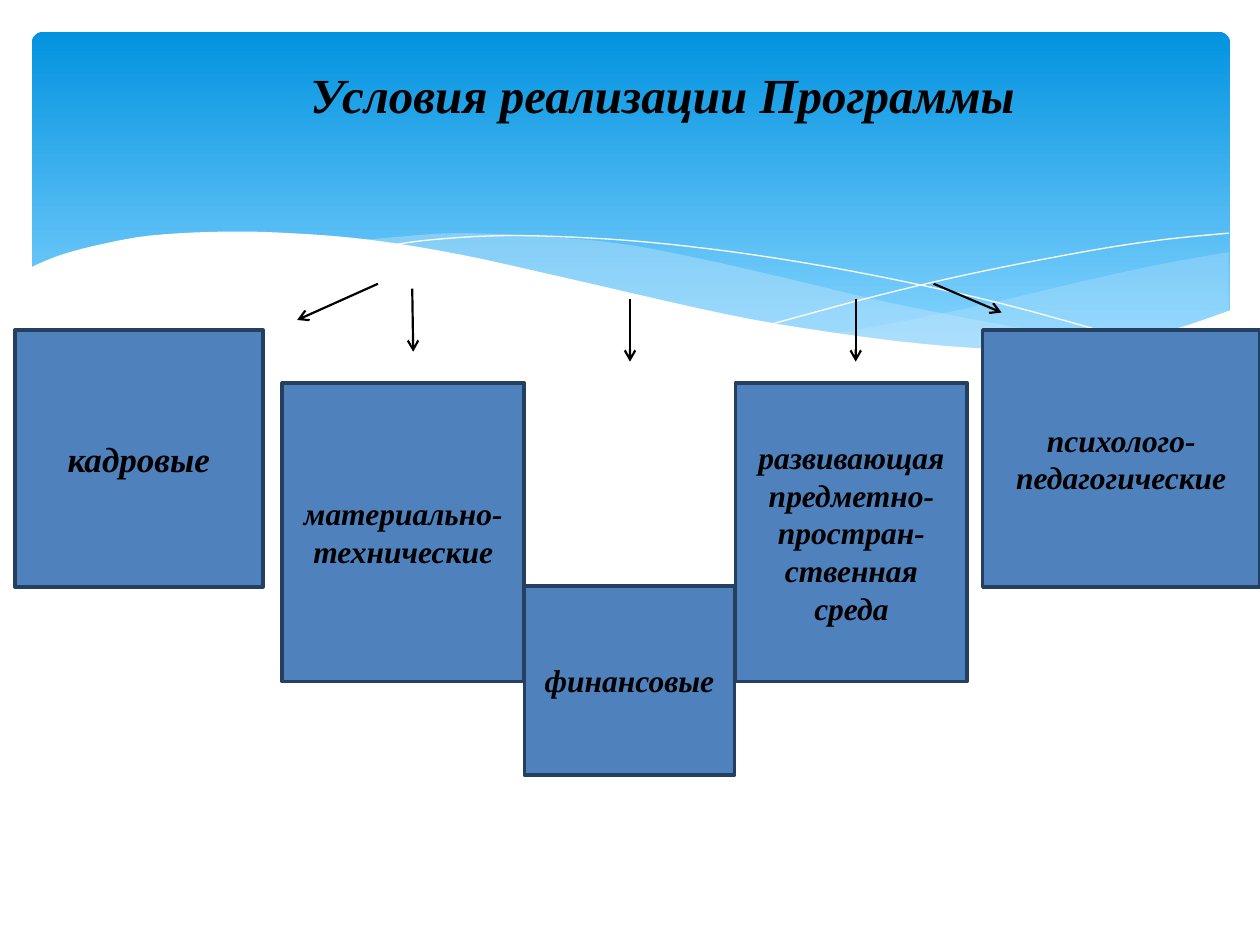
"""Build a slide on the conditions for carrying out the programme."""
from lxml.etree import SubElement
from pptx import Presentation
from pptx.dml.color import RGBColor
from pptx.enum.shapes import MSO_CONNECTOR as Connector, MSO_SHAPE as Shape
from pptx.enum.text import MSO_ANCHOR as Anchor, PP_ALIGN as Align
from pptx.oxml.ns import qn
from pptx.util import Cm, Pt

BLACK = RGBColor(0x00, 0x00, 0x00)
WHITE = RGBColor(0xFF, 0xFF, 0xFF)
SKY_TOP = RGBColor(0x02, 0x93, 0xE0)
SKY_BOTTOM = RGBColor(0x83, 0xD3, 0xFE)
PALE_BLUE = RGBColor(0xC6, 0xE7, 0xFC)
BOX_BLUE = RGBColor(0x4F, 0x81, 0xBD)
BOX_BORDER = RGBColor(0x24, 0x3F, 0x60)

TITLE = "Условия реализации Программы"
TITLE_PLACE = (2.65, 0.48, 21.41, 2.82)
BANNER_PLACE = (0.64, 0.64, 24.16, 6.86)
TEXT_FORMAT = {"name": "Times New Roman", "bold": True, "italic": True}

BOXES = [
    ("кадровые", 20, (0.3, 6.65, 5, 5.18)),
    ("материально-технические", 18, (5.69, 7.72, 4.88, 6.02)),
    ("финансовые", 18, (10.57, 11.81, 4.24, 3.81)),
    ("развивающая предметно-простран-ственная среда", 18, (14.83, 7.72, 4.67, 6.02)),
    ("психолого-педагогические", 18, (19.81, 6.65, 5.59, 5.18)),
]
ARROWS = [
    (7.62, 5.72, 5.99, 6.45),
    (8.31, 5.82, 8.33, 7.09),
    (12.7, 6.02, 12.7, 7.29),
    (17.25, 6.02, 17.25, 7.29),
    (18.82, 5.72, 20.19, 6.3),
]
RIGHT_BAND = [
    [(24.77, 5.08), (23.39, 5.33), (21.87, 5.66), (19.79, 6.15), (17.93, 6.53),
     (16.79, 6.73)],
    [(16.79, 6.73), (18.59, 6.96), (19.84, 7.04), (21.21, 7.04), (22.38, 6.96),
     (23.39, 6.78), (24.1, 6.53), (24.77, 6.27)],
]
MIDDLE_BAND = [
    [(22.68, 6.93), (20.5, 6.6), (17.93, 6.1), (15.98, 5.64), (14.1, 5.21),
     (12.42, 4.9), (10.67, 4.75), (9.17, 4.7), (7.95, 4.78), (7.26, 4.85)],
    [(7.26, 4.85), (9.19, 5.16), (11.4, 5.64), (14.38, 6.3), (16.51, 6.71),
     (18.36, 6.96), (19.94, 7.06), (21.3, 7.06), (22.25, 6.99), (22.68, 6.93)],
]
THIN_WAVES = [
    [(7.85, 4.95), (8.74, 4.83), (10.19, 4.75), (11.91, 4.8), (13.54, 4.93),
     (15.47, 5.18), (17.65, 5.56), (20.19, 6.12), (23.04, 6.91)],
    [(15.57, 6.53), (17.65, 5.97), (19.71, 5.49), (22, 5.05), (23.47, 4.83),
     (24.77, 4.7)],
]
WHITE_WAVE = [
    [(24.82, 6.25), (23.62, 6.65), (22.23, 6.93), (20.55, 7.04), (18.9, 6.96),
     (16.97, 6.73), (14.71, 6.35), (11.35, 5.59), (9.27, 5.13), (7.42, 4.83),
     (5.84, 4.7), (4.5, 4.67), (3.02, 4.75), (1.93, 4.95), (1.17, 5.16),
     (0.58, 5.41)],
    [(0.58, 8.36), (24.82, 8.36)],
]


def lengths(values):
    return [Cm(value) for value in values]


def smooth_curve(points, steps=5):
    """Return points on a Catmull-Rom spline through the given points."""
    padded = [points[0], *points, points[-1]]
    curve = [points[0]]
    for a, b, c, d in zip(padded, padded[1:], padded[2:], padded[3:]):
        for step in range(1, steps + 1):
            t = step / steps
            curve.append(tuple(
                q + t * (r - p) / 2 + t**2 * (2 * p - 5 * q + 4 * r - s) / 2
                + t**3 * (3 * q - p - 3 * r + s) / 2
                for p, q, r, s in zip(a, b, c, d)))
    return curve


def add_wave(slide, edges, fill=None, opacity=100):
    points = [lengths(point) for edge in edges
              for point in (smooth_curve(edge) if len(edge) > 2 else edge)]
    builder = slide.shapes.build_freeform(*points[0])
    builder.add_line_segments(points[1:], close=fill is not None)
    shape = builder.convert_to_shape()
    shape.shadow.inherit = False
    if fill is None:
        shape.fill.background()
        shape.line.color.rgb = WHITE
        shape.line.width = Pt(0)
        return
    shape.fill.solid()
    shape.fill.fore_color.rgb = fill
    shape.line.fill.background()
    if opacity < 100:
        color = shape.element.spPr.find(qn("a:solidFill"))[0]
        SubElement(color, qn("a:alpha"), val=str(opacity * 1000))


def add_banner(slide):
    banner = slide.shapes.add_shape(Shape.ROUNDED_RECTANGLE, *lengths(BANNER_PLACE))
    banner.adjustments[0] = 0.034
    banner.shadow.inherit = False
    banner.line.fill.background()
    banner.fill.gradient()
    banner.fill.gradient_angle = 270
    stops = zip(banner.fill.gradient_stops, (SKY_TOP, SKY_BOTTOM), (0, 0.9))
    for stop, color, position in stops:
        stop.color.rgb = color
        stop.position = position


def add_arrow(slide, ends):
    arrow = slide.shapes.add_connector(Connector.STRAIGHT, *lengths(ends))
    arrow.line.color.rgb = BLACK
    arrow.line.width = Pt(1.25)
    SubElement(arrow.line._get_or_add_ln(), qn("a:tailEnd"), type="arrow")
    SubElement(arrow.element.spPr, qn("a:effectLst"))


def write_text(shape, text, size):
    frame = shape.text_frame
    frame.word_wrap = True
    frame.vertical_anchor = Anchor.MIDDLE
    paragraph = frame.paragraphs[0]
    paragraph.alignment = Align.CENTER
    run = paragraph.add_run()
    run.text = text
    for name, value in {**TEXT_FORMAT, "size": Pt(size)}.items():
        setattr(run.font, name, value)
    run.font.color.rgb = BLACK


def add_box(slide, text, size, place):
    box = slide.shapes.add_shape(Shape.RECTANGLE, *lengths(place))
    box.shadow.inherit = False
    box.fill.solid()
    box.fill.fore_color.rgb = BOX_BLUE
    box.line.color.rgb = BOX_BORDER
    box.line.width = Pt(2)
    write_text(box, text, size)


def main():
    presentation = Presentation()
    presentation.slide_width, presentation.slide_height = Cm(25.4), Cm(19.05)
    slide = presentation.slides.add_slide(presentation.slide_layouts[5])
    add_banner(slide)
    add_wave(slide, RIGHT_BAND, PALE_BLUE, 29)
    add_wave(slide, MIDDLE_BAND, PALE_BLUE, 40)
    for wave in THIN_WAVES:
        add_wave(slide, [wave])
    add_wave(slide, WHITE_WAVE, WHITE)
    for ends in ARROWS:
        add_arrow(slide, ends)
    for box in BOXES:
        add_box(slide, *box)
    title = slide.shapes.title
    title.left, title.top, title.width, title.height = lengths(TITLE_PLACE)
    write_text(title, TITLE, 28)
    title.element.getparent().append(title.element)
    presentation.save("out.pptx")


if __name__ == "__main__":
    main()
